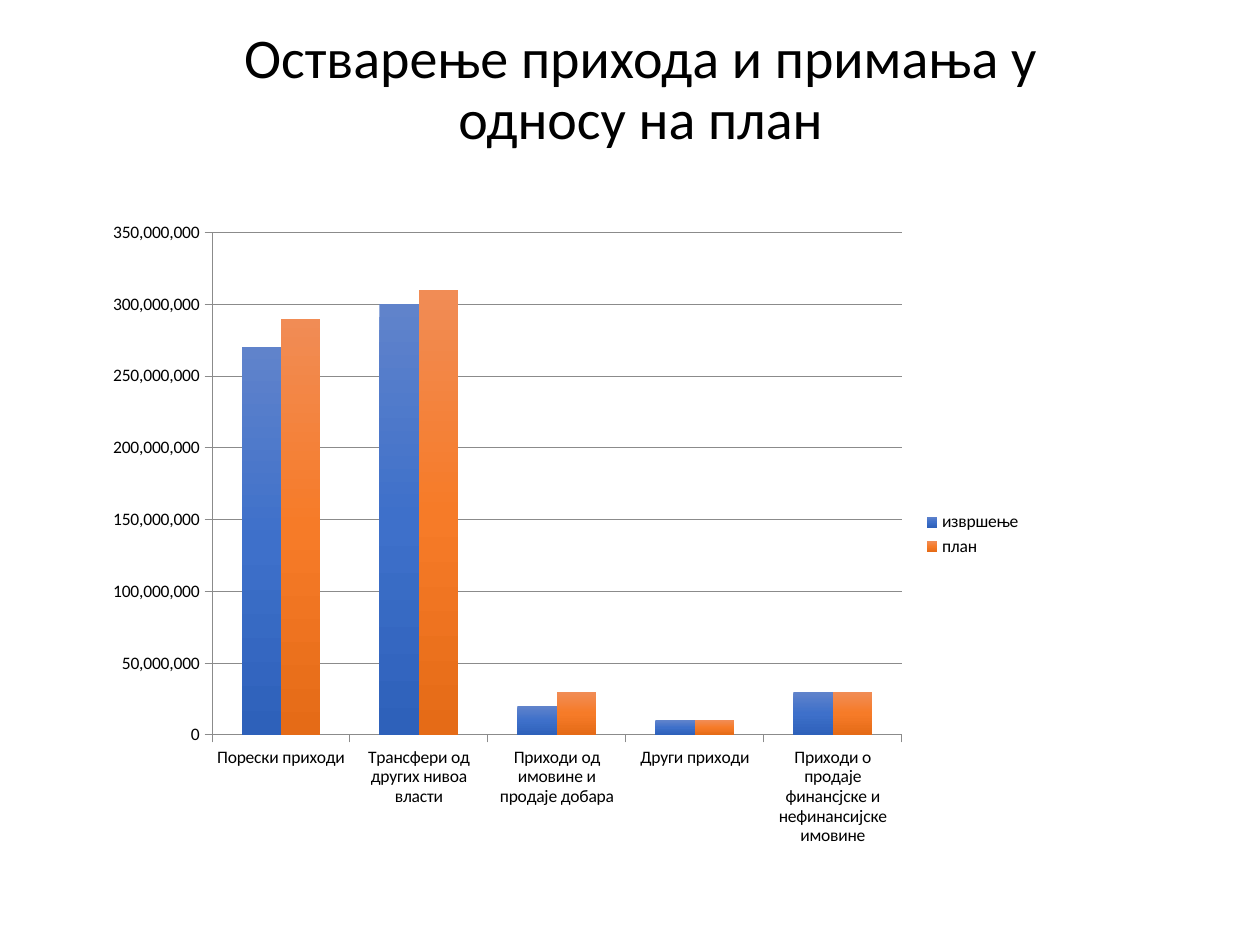
from copy import deepcopy
from lxml import etree
from pptx import Presentation
from pptx.chart.data import CategoryChartData as ChartData
from pptx.dml.color import RGBColor as RGB
from pptx.enum.chart import XL_CHART_TYPE as Kind, XL_LEGEND_POSITION as Place
from pptx.enum.chart import XL_TICK_MARK as Tick
from pptx.enum.text import MSO_ANCHOR as Anchor, PP_ALIGN as Align
from pptx.oxml.ns import qn
from pptx.util import Inches, Pt

# Content
TITLE = "Остварење прихода и примања у односу на план"
CATS = [
    "Порески приходи",
    "Трансфери од других нивоа власти",
    "Приходи од имовине и продаје добара",
    "Други приходи",
    "Приходи о продаје финансјске и нефинансијске имовине",
]
MILLION = 1_000_000
SERIES = {
    "извршење": [270, 300, 20, 10, 30],
    "план": [290, 310, 30, 10, 30],
}

# Look: each series runs through three shades, top to bottom
FONT = "Calibri"
COLORS = {
    "text": "000000",
    "line": "8B8B8B",
    "извршење": ["6083CB", "3E70CA", "2E61BA"],
    "план": ["F18C55", "F67B28", "E56B17"],
}

# Places as shares of the slide, and the plot as shares of the chart
WIDE, HIGH = Inches(10), Inches(7.5)
TITLE_BOX = (0.142, 0.1, 0.733, 0.067)
CHART_BOX = (0.075, 0.222, 0.746, 0.687)
PLOT_BOX = {"x": 0.125, "y": 0.035, "w": 0.734, "h": 0.774}


def box(x, y, w, h):
    return [int(n) for n in (x * WIDE, y * HIGH, w * WIDE, h * HIGH)]


def write(frame, text, size=32, color="text", align=Align.CENTER, space=0.9):
    frame.word_wrap = True
    frame.vertical_anchor = Anchor.BOTTOM
    para = frame.paragraphs[0]
    para.alignment, para.line_spacing = align, space
    run = para.add_run()
    run.text = text
    style(run.font, size, color)


def style(font, size, color="text"):
    font.name, font.size = FONT, Pt(size)
    font.color.rgb = RGB.from_string(COLORS[color])


def shade(series, hues):
    fill = series.format.fill
    fill.gradient()
    fill.gradient_angle = 270
    stops = next(series._element.iter(qn("a:gsLst")))
    stops.append(deepcopy(stops[-1]))
    for i, (stop, hue) in enumerate(zip(fill.gradient_stops, hues)):
        stop.position = i / (len(hues) - 1)
        stop.color.rgb = RGB.from_string(hue)


def rule(line):
    line.color.rgb = RGB.from_string(COLORS["line"])
    line.width = Pt(0.5)


def set_plot(chart):
    area = chart._chartSpace.chart.plotArea
    for old in area.findall(qn("c:layout")):
        area.remove(old)
    layout = etree.Element(qn("c:layout"))
    area.insert(0, layout)
    manual = etree.SubElement(layout, qn("c:manualLayout"))
    parts = {"layoutTarget": "inner", "xMode": "edge", "yMode": "edge", **PLOT_BOX}
    for name, val in parts.items():
        etree.SubElement(manual, qn("c:" + name)).set("val", str(val))


def add_chart(slide):
    data = ChartData(number_format="#,##0")
    data.categories = CATS
    for name, vals in SERIES.items():
        data.add_series(name, [v * MILLION for v in vals])
    chart = slide.shapes.add_chart(
        Kind.COLUMN_CLUSTERED, *box(*CHART_BOX), data).chart
    chart.has_title = False
    style(chart.font, 10)
    set_plot(chart)

    # Bars
    plot = chart.plots[0]
    plot.gap_width, plot.overlap, plot.vary_by_categories = 150, 0, False
    for series in plot.series:
        shade(series, COLORS[series.name])

    # Axes and legend
    for axis in (chart.category_axis, chart.value_axis):
        axis.major_tick_mark, axis.minor_tick_mark = Tick.OUTSIDE, Tick.NONE
        rule(axis.format.line)
    values = chart.value_axis
    values.minimum_scale, values.maximum_scale = 0, 350 * MILLION
    values.major_unit = 50 * MILLION
    values.has_major_gridlines = True
    rule(values.major_gridlines.format.line)
    values.tick_labels.number_format = "#,##0"
    values.tick_labels.number_format_is_linked = False
    chart.has_legend = True
    chart.legend.position = Place.RIGHT
    chart.legend.include_in_layout = False


def main():
    deck = Presentation()
    deck.slide_width, deck.slide_height = WIDE, HIGH
    slide = deck.slides.add_slide(deck.slide_layouts[5])
    title = slide.shapes.title
    title.left, title.top, title.width, title.height = box(*TITLE_BOX)
    write(title.text_frame, TITLE)
    add_chart(slide)
    deck.save("out.pptx")


if __name__ == "__main__":
    main()
